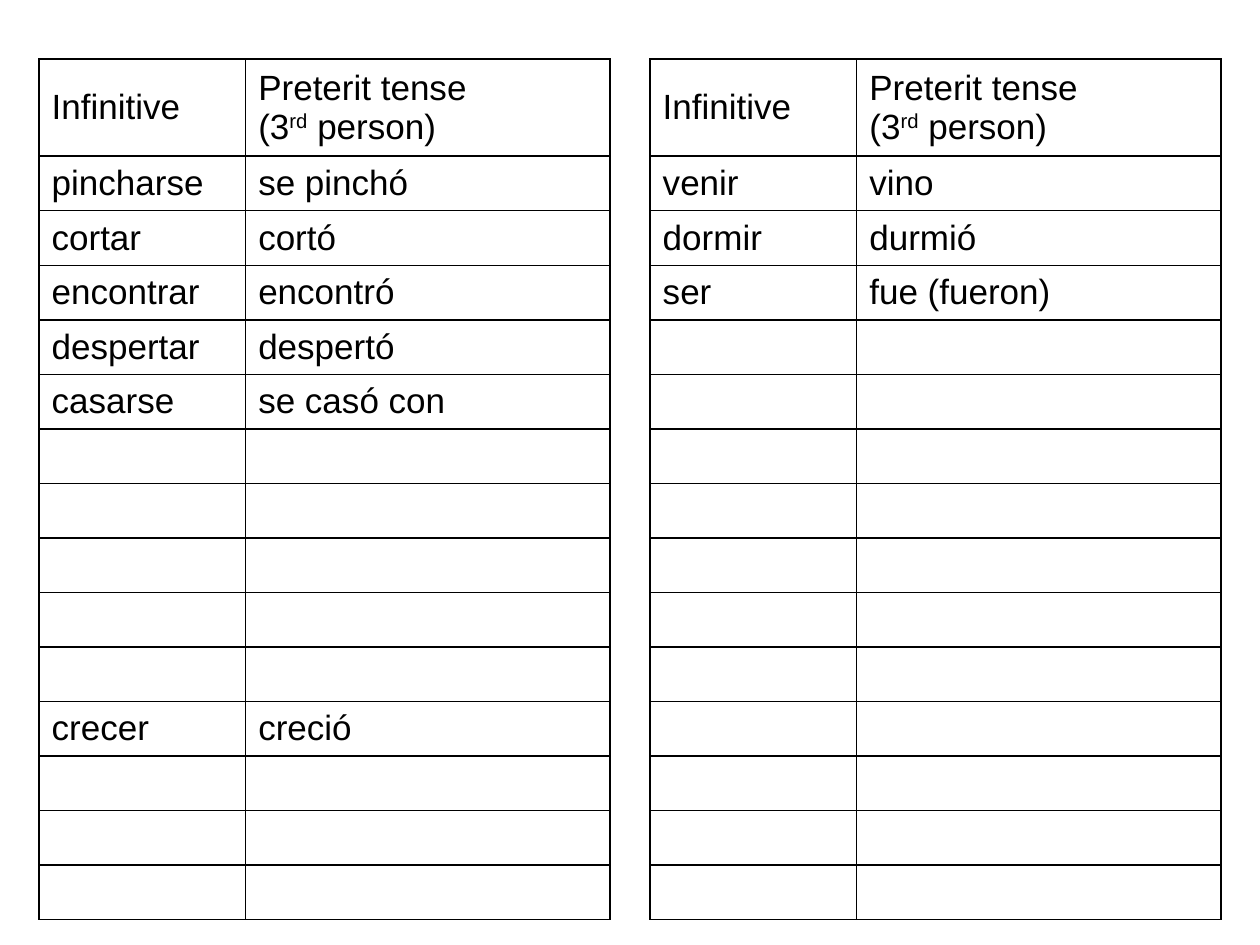
from lxml.etree import SubElement
from pptx import Presentation
from pptx.dml.color import RGBColor
from pptx.enum.text import MSO_ANCHOR
from pptx.oxml.ns import qn
from pptx.util import Inches, Pt

THEME = {
    "font": {"name": "Arial", "size": Pt(20), "bold": False},
    "ink": "000000",
    "paper": "FFFFFF",
    "border": Pt(1),
    "raised": "30000",
}

ROW_COUNT = 15
TABLE_TOP, TABLE_WIDTH, TABLE_HEIGHT = 0.47, 4.53, 6.83
HEADER_HEIGHT = 0.77
ROW_HEIGHT = (TABLE_HEIGHT - HEADER_HEIGHT) / (ROW_COUNT - 1)
COLUMN_WIDTHS = (1.64, 2.89)

HEADER = ("Infinitive", "Preterit tense \v(3^rd^ person)")
VERB_TABLES = [
    (0.31, {
        1: ("pincharse", "se pinchó"),
        2: ("cortar", "cortó"),
        3: ("encontrar", "encontró"),
        4: ("despertar", "despertó"),
        5: ("casarse", "se casó con"),
        11: ("crecer", "creció"),
    }),
    (5.16, {
        1: ("venir", "vino"),
        2: ("dormir", "durmió"),
        3: ("ser", "fue (fueron)"),
    }),
]


def write_text(para, text):
    for line_index, line in enumerate(text.split("\v")):
        if line_index:
            para.add_line_break()
        for part_index, part in enumerate(line.split("^")):
            span = para.add_run()
            span.text = part
            for name, value in THEME["font"].items():
                setattr(span.font, name, value)
            span.font.color.rgb = RGBColor.from_string(THEME["ink"])
            if part_index % 2:
                span.font._element.set("baseline", THEME["raised"])


def draw_borders(cell):
    properties = cell._tc.get_or_add_tcPr()
    for side in ("lnL", "lnR", "lnT", "lnB"):
        line = SubElement(properties, qn(f"a:{side}"), w=str(THEME["border"]))
        fill = SubElement(line, qn("a:solidFill"))
        SubElement(fill, qn("a:srgbClr"), val=THEME["ink"])


deck = Presentation()
deck.slide_width, deck.slide_height = Inches(10), Inches(7.5)
page = deck.slides.add_slide(deck.slide_layouts[6])

for left, verbs in VERB_TABLES:
    table = page.shapes.add_table(
        ROW_COUNT, len(COLUMN_WIDTHS), Inches(left), Inches(TABLE_TOP),
        Inches(TABLE_WIDTH), Inches(TABLE_HEIGHT),
    ).table
    table.first_row = False
    table.horz_banding = False
    for column, width in zip(table.columns, COLUMN_WIDTHS):
        column.width = Inches(width)

    contents = {0: HEADER, **verbs}
    for row_index, row in enumerate(table.rows):
        row.height = Inches(ROW_HEIGHT if row_index else HEADER_HEIGHT)
        for column_index, cell in enumerate(row.cells):
            cell.vertical_anchor = MSO_ANCHOR.MIDDLE
            draw_borders(cell)
            cell.fill.solid()
            cell.fill.fore_color.rgb = RGBColor.from_string(THEME["paper"])
            if row_index in contents:
                write_text(cell.text_frame.paragraphs[0], contents[row_index][column_index])

deck.save("out.pptx")
